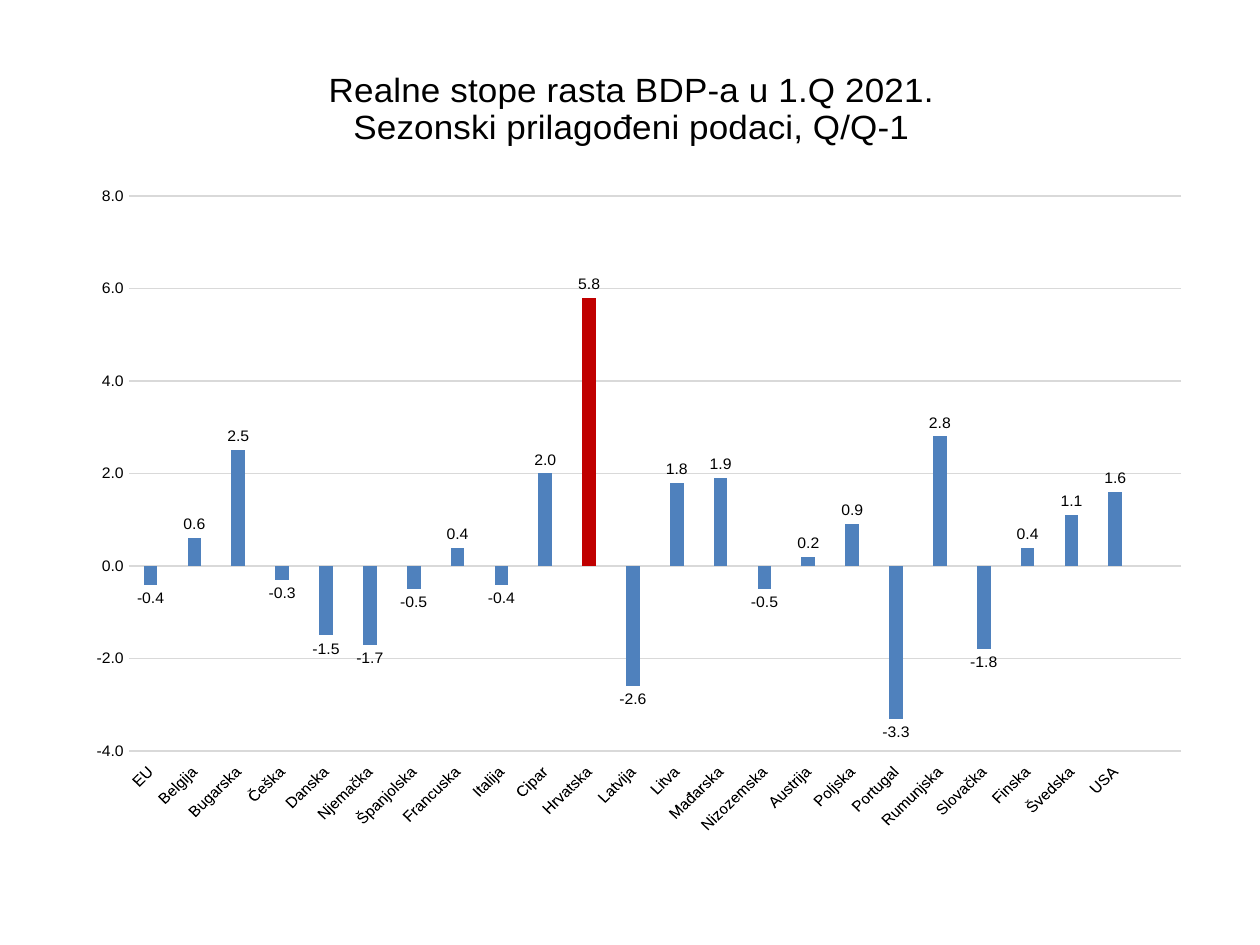
from lxml import etree
from pptx import Presentation
from pptx import util as u
from pptx.chart.data import CategoryChartData
from pptx.dml.color import RGBColor
from pptx.enum import chart as kinds
from pptx.oxml import parse_xml
from pptx.oxml.ns import nsdecls, qn

PX = 914400 / 126
FONT = "Arial"
COLORS = {"text": "000000", "bar": "4F81BD", "highlight": "C00000", "grid": "D9D9D9"}
HIGHLIGHT = "Hrvatska"
GROWTH = {
    "EU": -0.4, "Belgija": 0.6, "Bugarska": 2.5, "Češka": -0.3,
    "Danska": -1.5, "Njemačka": -1.7, "Španjolska": -0.5, "Francuska": 0.4,
    "Italija": -0.4, "Cipar": 2.0, "Hrvatska": 5.8, "Latvija": -2.6,
    "Litva": 1.8, "Mađarska": 1.9, "Nizozemska": -0.5, "Austrija": 0.2,
    "Poljska": 0.9, "Portugal": -3.3, "Rumunjska": 2.8, "Slovačka": -1.8,
    "Finska": 0.4, "Švedska": 1.1, "USA": 1.6, "": None,
}


def px(length):
    """Turn pixels into EMU."""
    return u.Emu(round(length * PX))


def color(name):
    """Return a named colour."""
    return RGBColor.from_string(COLORS[name])


def style_font(font, size, bold=False):
    """Set the face, size and colour of a font."""
    font.name, font.size, font.bold = FONT, u.Pt(size), bold
    font.color.rgb = color("text")


def write_text(frame, content, size=10, bold=False):
    """Write each line of content as a formatted paragraph."""
    for index, line in enumerate(content.split("\n")):
        paragraph = frame.add_paragraph() if index else frame.paragraphs[0]
        run = paragraph.add_run()
        run.text = line
        style_font(run.font, size, bold)


def fill_solid(form, name):
    """Fill a chart element with a named colour."""
    form.fill.solid()
    form.fill.fore_color.rgb = color(name)


def style_line(line):
    """Draw a thin grid-coloured line."""
    line.color.rgb = color("grid")
    line.width = u.Pt(0.75)


def set_plot_layout(chart, x, y, w, h):
    """Place the inner plot area by fractions of the chart."""
    area = chart._chartSpace.chart.plotArea
    for old in area.findall(qn("c:layout")):
        area.remove(old)
    layout = parse_xml(f"<c:layout {nsdecls('c')}><c:manualLayout/></c:layout>")
    values = {"layoutTarget": "inner", "xMode": "edge", "yMode": "edge",
              "x": x, "y": y, "w": w, "h": h}
    for tag, value in values.items():
        etree.SubElement(layout[0], qn(f"c:{tag}")).set("val", str(value))
    area.insert(0, layout)


def style_axes(chart):
    """Format the category and value axes."""
    category, value = chart.category_axis, chart.value_axis
    for axis in (category, value):
        axis.major_tick_mark = axis.minor_tick_mark = kinds.XL_TICK_MARK.NONE
        style_font(axis.tick_labels.font, 9)
    category.tick_label_position = kinds.XL_TICK_LABEL_POSITION.LOW
    category.has_major_gridlines = False
    style_line(category.format.line)
    body = category._element.find(qn("c:txPr")).find(qn("a:bodyPr"))
    body.set("rot", "-2700000")
    body.set("vert", "horz")
    value.minimum_scale, value.maximum_scale, value.major_unit = -4, 8, 2
    value.tick_labels.number_format = "0.0"
    value.tick_labels.number_format_is_linked = False
    value.format.line.fill.background()
    style_line(value.major_gridlines.format.line)


def style_columns(plot):
    """Format the columns and their value labels."""
    plot.gap_width, plot.overlap = 219, -27
    plot.vary_by_categories = False
    series = plot.series[0]
    series.invert_if_negative = False
    fill_solid(series.format, "bar")
    fill_solid(series.points[list(GROWTH).index(HIGHLIGHT)].format, "highlight")
    labels = series.data_labels
    labels.show_value = True
    labels.number_format, labels.number_format_is_linked = "0.0", False
    labels.position = kinds.XL_LABEL_POSITION.OUTSIDE_END
    style_font(labels.font, 9)


def add_growth_chart(slide, left, top, width, height):
    """Add the GDP growth chart in the given box."""
    data = CategoryChartData(number_format="0.0")
    data.categories = list(GROWTH)
    data.add_series("Series 1", list(GROWTH.values()))
    chart = slide.shapes.add_chart(
        kinds.XL_CHART_TYPE.COLUMN_CLUSTERED,
        px(left), px(top), px(width), px(height), data).chart
    style_font(chart.font, 10)
    chart.has_legend = False
    chart.has_title = True
    chart.chart_title.include_in_layout = False
    write_text(chart.chart_title.text_frame,
               "Realne stope rasta BDP-a u 1.Q 2021.\n"
               "Sezonski prilagođeni podaci, Q/Q-1", size=20)
    style_axes(chart)
    style_columns(chart.plots[0])
    set_plot_layout(chart, 0.06, 0.2, 0.92, 0.73)


def main():
    """Build and save the slide."""
    presentation = Presentation()
    presentation.slide_width, presentation.slide_height = px(1260), px(945)
    slide = presentation.slides.add_slide(presentation.slide_layouts[6])
    add_growth_chart(slide, 60, 44, 1144, 790)
    presentation.save("out.pptx")


if __name__ == "__main__":
    main()
